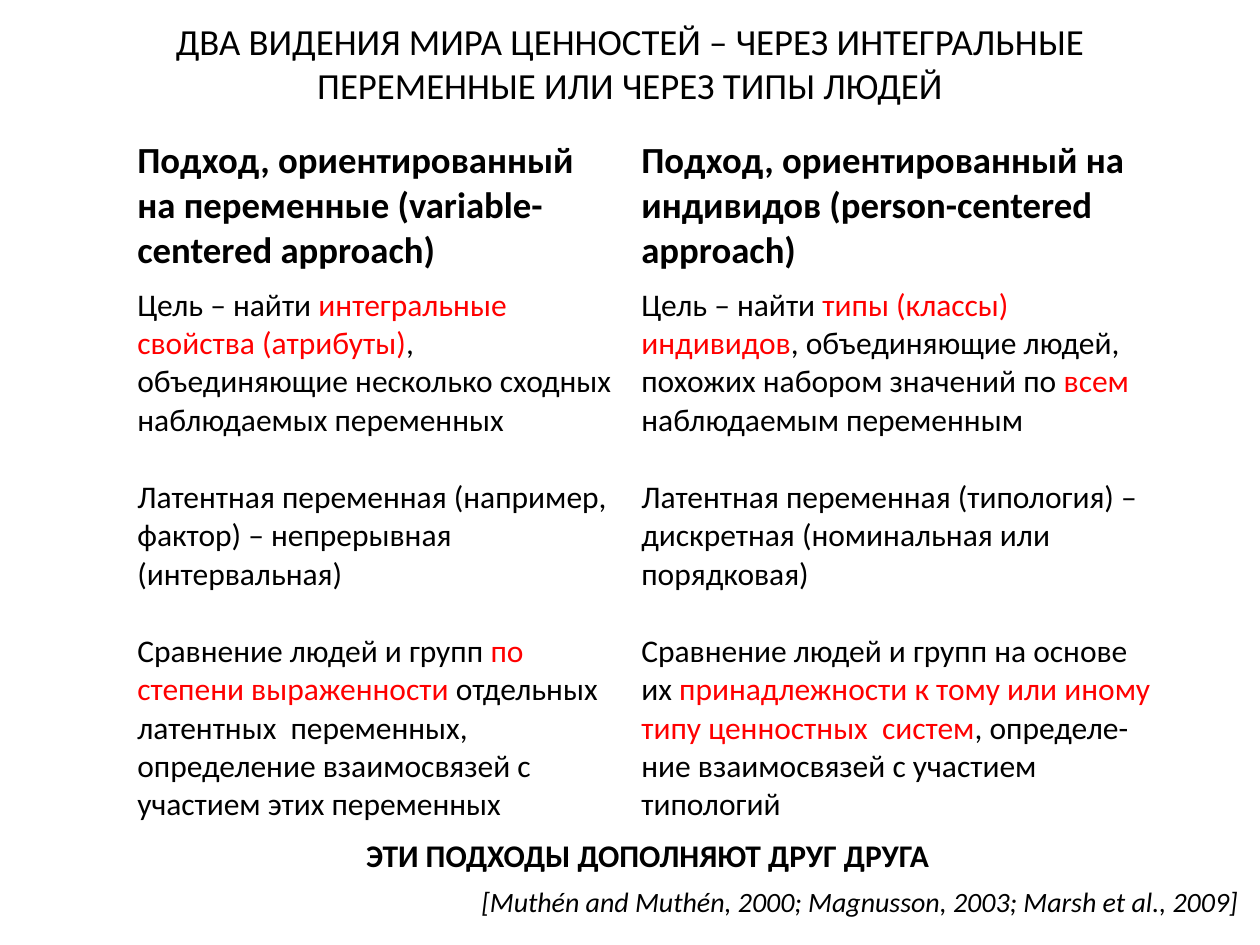
from pptx import Presentation
from pptx.dml.color import RGBColor
from pptx.enum.text import MSO_ANCHOR, MSO_AUTO_SIZE, PP_ALIGN
from pptx.util import Inches, Pt

BLACK = RGBColor(0x00, 0x00, 0x00)
RED = RGBColor(0xFF, 0x00, 0x00)
FONT = "Calibri"
LEFT, CENTER, RIGHT = PP_ALIGN.LEFT, PP_ALIGN.CENTER, PP_ALIGN.RIGHT
TOP = MSO_ANCHOR.TOP
NO_FIT = MSO_AUTO_SIZE.NONE
TITLE_ONLY = 5

# Each paragraph is a list of parts; every second part is highlighted
HEADERS = [
    "Подход, ориентированный на переменные (variable-centered approach)",
    "Подход, ориентированный на индивидов (person-centered approach)",
]
VARIABLE_CENTERED = [
    ["Цель – найти ", "интегральные свойства (атрибуты)",
     ", объединяющие несколько сходных наблюдаемых переменных"],
    ["Латентная переменная (например, фактор) – непрерывная (интервальная)"],
    ["Сравнение людей и групп ", "по степени выраженности",
     " отдельных латентных  переменных, определение взаимосвязей "
     "с участием этих переменных"],
]
PERSON_CENTERED = [
    ["Цель – найти ", "типы (классы) индивидов",
     ", объединяющие людей, похожих набором значений по ", "всем ",
     "наблюдаемым переменным"],
    ["Латентная переменная (типология) – дискретная "
     "(номинальная или порядковая)"],
    ["Сравнение людей и групп на основе их ",
     "принадлежности к тому или иному типу ценностных  систем",
     ", определе-ние взаимосвязей с участием типологий"],
]


class Deck:
    def __init__(self):
        self.prs = Presentation()
        self.prs.slide_width, self.prs.slide_height = Inches(10), Inches(7.5)
        self.s = self.prs.slides.add_slide(
            self.prs.slide_layouts[TITLE_ONLY])

    def fill_text(self, tf, paragraphs, size, align=LEFT, bold=False,
                  italic=False, gap=0):
        tf.word_wrap = True
        for i, parts in enumerate(paragraphs):
            p = tf.add_paragraph() if i else tf.paragraphs[0]
            p.alignment = align
            p.space_before = Pt(gap if i else 0)
            for j, part in enumerate(parts):
                r = p.add_run()
                r.text = part
                r.font.name, r.font.size = FONT, Pt(size)
                r.font.bold, r.font.italic = bold, italic
                r.font.color.rgb = RED if j % 2 else BLACK

    def title(self, text, x, y, w, h):
        sp = self.s.shapes.title
        sp.left, sp.top, sp.width, sp.height = map(Inches, (x, y, w, h))
        tf = sp.text_frame
        tf.auto_size, tf.vertical_anchor = NO_FIT, TOP
        tf.margin_top = Inches(0.15)
        self.fill_text(tf, [[text]], 21, CENTER)

    def table(self, x, y, cols, rows):
        frame = self.s.shapes.add_table(
            len(rows), len(cols), Inches(x), Inches(y),
            Inches(sum(cols)), Inches(sum(rows)))
        table = frame.table
        table.first_row = table.horz_banding = False
        for col, width in zip(table.columns, cols):
            col.width = Inches(width)
        for row, height in zip(table.rows, rows):
            row.height = Inches(height)
        for cell in table.iter_cells():
            cell.fill.background()
        return table

    def text(self, text, x, y, w, h, size, **style):
        tf = self.s.shapes.add_textbox(
            *map(Inches, (x, y, w, h))).text_frame
        tf.margin_right = Inches(0.17)
        self.fill_text(tf, [[text]], size, **style)


def main():
    deck = Deck()
    deck.title("ДВА ВИДЕНИЯ МИРА ЦЕННОСТЕЙ – ЧЕРЕЗ ИНТЕГРАЛЬНЫЕ "
               "ПЕРЕМЕННЫЕ ИЛИ ЧЕРЕЗ ТИПЫ ЛЮДЕЙ", 0.69, 0, 8.62, 1.31)

    # Comparison of the two approaches
    table = deck.table(0.99, 1.05, [4, 4.36], [1.08, 3.84, 0.36])
    bodies = [VARIABLE_CENTERED, PERSON_CENTERED]
    for c, (header, body) in enumerate(zip(HEADERS, bodies)):
        deck.fill_text(table.cell(0, c).text_frame, [[header]], 21, bold=True)
        deck.fill_text(table.cell(1, c).text_frame, body, 18, gap=22)

    # Conclusion across both columns
    conclusion = table.cell(2, 0)
    conclusion.merge(table.cell(2, 1))
    deck.fill_text(conclusion.text_frame,
                   [["ЭТИ ПОДХОДЫ ДОПОЛНЯЮТ ДРУГ ДРУГА "]],
                   18, CENTER, bold=True)

    # Citation
    deck.text("[Muthén and Muthén, 2000; Magnusson, 2003; "
              "Marsh et al., 2009]", 2.67, 6.97, 7.33, 0.37, 16,
              align=RIGHT, italic=True)
    deck.prs.save("out.pptx")


if __name__ == "__main__":
    main()
